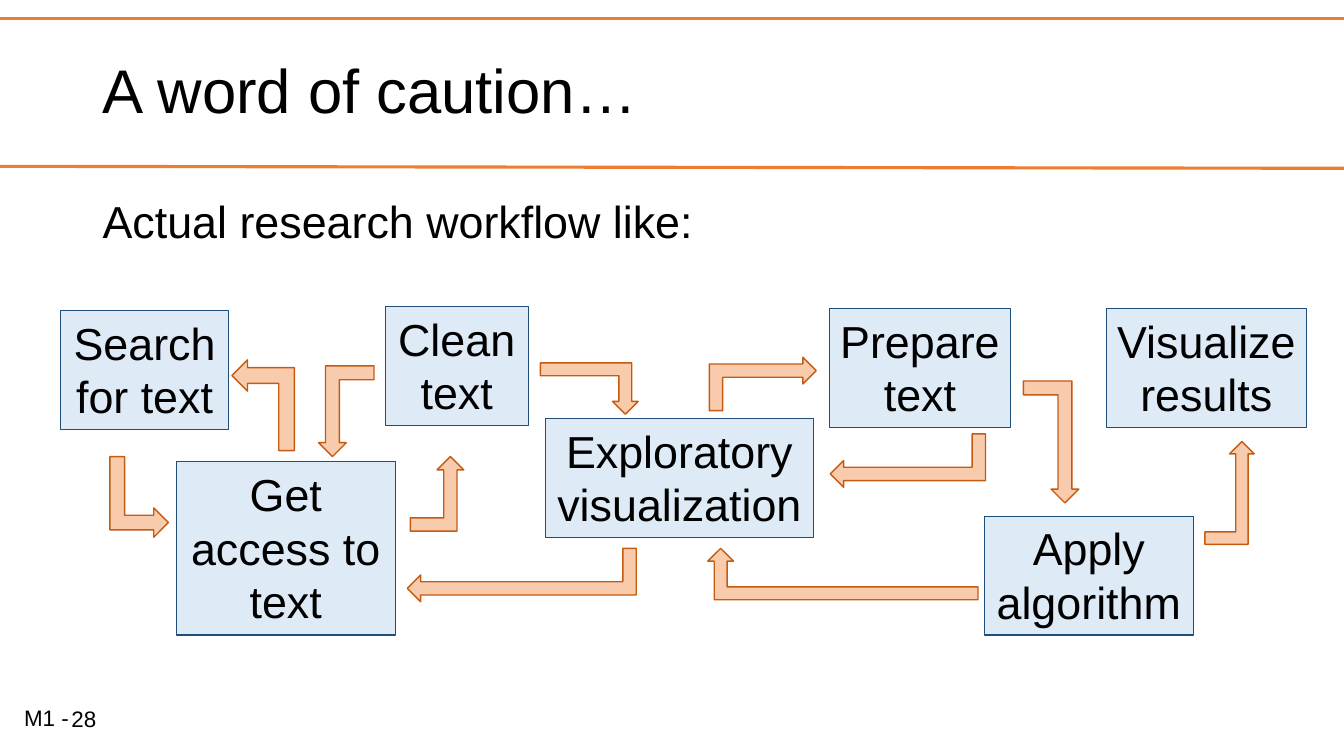
import pptx
import pptx.util
import pptx.dml.color
import pptx.enum.shapes
import pptx.enum.text
import pptx.oxml.ns
from lxml import etree

Inches = pptx.util.Inches
Pt = pptx.util.Pt
Kind = pptx.enum.shapes.MSO_SHAPE
Align = pptx.enum.text.PP_ALIGN
Anchor = pptx.enum.text.MSO_ANCHOR

# Steps of the workflow: text, left, top, width, height
STEPS = [
    ("Search for text", 0.6, 3.08, 1.67, 1.18),
    ("Get access to text", 1.75, 4.58, 2.17, 1.72),
    ("Clean text", 3.82, 3.04, 1.42, 1.18),
    ("Exploratory visualization", 5.41, 4.15, 2.66, 1.18),
    ("Prepare text", 8.23, 3.06, 1.79, 1.18),
    ("Apply algorithm", 9.76, 5.12, 2.08, 1.18),
    ("Visualize results", 10.97, 3.06, 1.99, 1.18),
]

# Bent arrows before turning: left, top, width, height, turn, flips
ARROWS = [
    (0.98, 4.64, 0.8, 0.58, 90, ""),
    (2.16, 3.71, 0.9, 0.62, 270, ""),
    (3.16, 3.63, 0.55, 0.9, 0, "HV"),
    (4.07, 4.53, 0.53, 0.74, 0, ""),
    (4.91, 4.57, 0.53, 2.27, 90, "V"),
    (5.36, 3.6, 0.97, 0.51, 0, "V"),
    (7.3, 3.28, 0.53, 1.06, 270, "V"),
    (8.74, 3.8, 0.53, 1.54, 90, "V"),
    (7.02, 5.44, 2.68, 0.51, 0, "H"),
    (10.15, 3.78, 0.55, 1.21, 0, "V"),
    (11.95, 4.38, 0.49, 1.02, 0, ""),
]


def color(code):
    return pptx.dml.color.RGBColor.from_string(code)


def place(shape, box):
    shape.left, shape.top, shape.width, shape.height = map(Inches, box)


class Deck:
    font = "Arial"
    ink = "000000"
    rule_ink = "ED7D31"
    step_ink = ("DEEBF7", "1F4E79", 0.75)
    arrow_ink = ("F8CBAD", "C55A11", 1)

    def __init__(self):
        self.file = pptx.Presentation()
        self.file.slide_width = Inches(13.33)
        self.file.slide_height = Inches(7.5)
        self.slide = self.file.slides.add_slide(self.file.slide_layouts[5])

    def put_text(self, shape, text, size, align=Align.LEFT, anchor=Anchor.TOP):
        frame = shape.text_frame
        frame.word_wrap = True
        frame.vertical_anchor = anchor
        para = frame.paragraphs[0]
        para.alignment = align
        run = para.add_run()
        run.text = text
        run.font.name = self.font
        run.font.size = Pt(size)
        run.font.color.rgb = color(self.ink)
        return para

    def title(self, text, *box):
        shape = self.slide.shapes.title
        place(shape, box)
        para = self.put_text(shape, text, 44, anchor=Anchor.MIDDLE)
        para.line_spacing = 0.9

    def label(self, text, size, *box, anchor=Anchor.TOP):
        shape = self.slide.shapes.add_textbox(*map(Inches, box))
        self.put_text(shape, text, size, anchor=anchor)

    def rule(self, *ends):
        line = self.slide.shapes.add_connector(
            pptx.enum.shapes.MSO_CONNECTOR.STRAIGHT, *map(Inches, ends))
        line.line.color.rgb = color(self.rule_ink)
        line.line.width = Pt(2.25)
        etree.SubElement(line.element.spPr, pptx.oxml.ns.qn("a:effectLst"))

    def shape(self, kind, box, inks):
        fill, edge, width = inks
        shape = self.slide.shapes.add_shape(kind, *map(Inches, box))
        shape.shadow.inherit = False
        shape.fill.solid()
        shape.fill.fore_color.rgb = color(fill)
        shape.line.color.rgb = color(edge)
        shape.line.width = Pt(width)
        return shape

    def step(self, text, *box):
        shape = self.shape(Kind.RECTANGLE, box, self.step_ink)
        frame = shape.text_frame
        frame.margin_left = frame.margin_right = Inches(0.05)
        self.put_text(shape, text, 32, Align.CENTER)

    def arrow(self, *args):
        *box, turn, flips = args
        shape = self.shape(Kind.BENT_UP_ARROW, box, self.arrow_ink)
        shape.rotation = turn
        for axis in flips:
            shape.element.spPr.xfrm.set("flip" + axis, "1")


def main():
    deck = Deck()
    deck.rule(0, 0.18, 13.33, 0.18)
    deck.rule(0, 1.65, 13.33, 1.67)
    deck.title("A word of caution…", 0.92, 0.2, 11.5, 1.45)
    deck.label("Actual research workflow like:", 32, 0.92, 1.87, 8.26, 0.64)
    for step in STEPS:
        deck.step(*step)
    for arrow in ARROWS:
        deck.arrow(*arrow)
    deck.label("M1 -", 16, 0.14, 6.94, 0.78, 0.37)
    deck.label("28", 16, 0.61, 6.92, 2.24, 0.41, anchor=Anchor.MIDDLE)
    deck.file.save("out.pptx")


if __name__ == "__main__":
    main()
